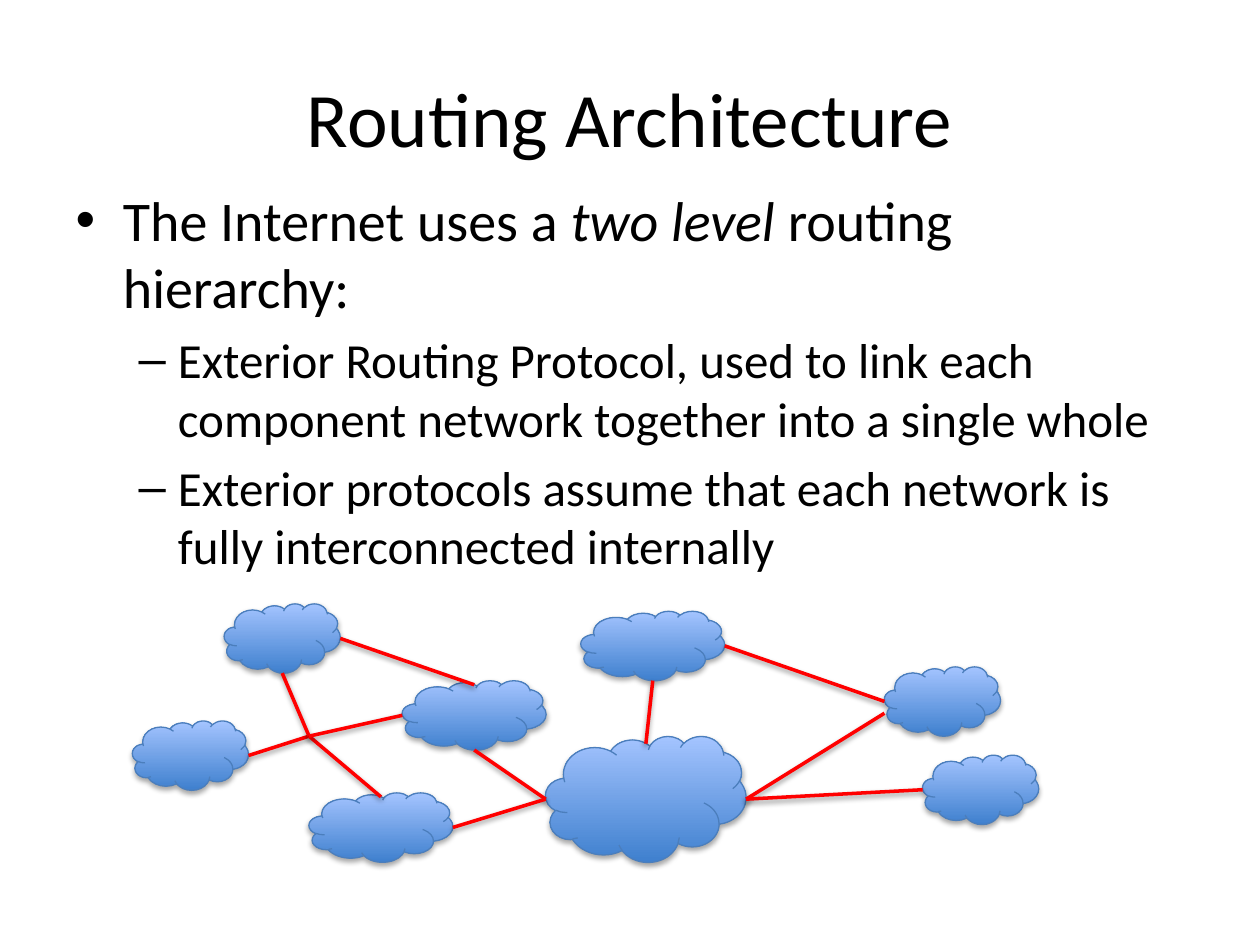
from dataclasses import dataclass

from lxml.etree import SubElement
from pptx import Presentation
from pptx.dml.color import RGBColor as RGB
from pptx.enum.shapes import MSO_CONNECTOR as CONN, MSO_SHAPE as SHAPE
from pptx.enum.text import MSO_ANCHOR, MSO_AUTO_SIZE, PP_ALIGN
from pptx.oxml.ns import qn
from pptx.util import Cm, Pt


@dataclass(frozen=True)
class Theme:
    font: str = "Calibri"
    text: RGB = RGB(0, 0, 0)
    title_size: float = 44
    level_sizes: tuple = (32, 28)
    cloud_bottom: RGB = RGB(0x3F, 0x80, 0xCE)
    cloud_top: RGB = RGB(0xA4, 0xC4, 0xFF)
    cloud_line: RGB = RGB(0x4B, 0x7E, 0xBC)
    cloud_line_width: float = 0.75
    link: RGB = RGB(0xFF, 0, 0)
    link_width: float = 2
    shadow: str = "000000"


THEME = Theme()

TITLE = "Routing Architecture"
# (level, runs of (text, italic))
BULLETS = [
    (0, [("The Internet uses a ", False), ("two level ", True),
         ("routing hierarchy:", False)]),
    (1, [("Exterior Routing Protocol, used to link each component network "
          "together into a single whole", False)]),
    (1, [("Exterior protocols assume that each network is fully "
          "interconnected internally", False)]),
]

# Sizes and positions in cm, relative to the diagram box
SMALL, WIDE, LARGE = (2.34, 1.4), (2.9, 1.4), (4.04, 2.54)
CLOUDS = {
    "south": (3.56, 3.81, WIDE),
    "centre": (5.44, 1.55, WIDE),
    "north": (9.04, 0.15, WIDE),
    "hub": (8.33, 2.67, LARGE),
    "east": (15.16, 1.27, SMALL),
    "southeast": (15.93, 3.05, SMALL),
    "west": (0, 2.36, SMALL),
    "northwest": (1.85, 0, SMALL),
    "junction": (3.56, 2.67, None),
}
# Points on a cloud as fractions of its width and height
SIDES = {
    "left": (0, 0.5),
    "lower left": (0, 0.67),
    "right": (1, 0.5),
    "top": (0.5, 0.06),
    "bottom": (0.5, 1),
}
JUNCTION = ("junction", None)
LINKS = [
    (("west", "right"), JUNCTION),
    (("northwest", "bottom"), JUNCTION),
    (JUNCTION, ("south", "top")),
    (JUNCTION, ("centre", "left")),
    (("northwest", "right"), ("centre", "top")),
    (("centre", "bottom"), ("hub", "left")),
    (("north", "bottom"), ("hub", "top")),
    (("south", "right"), ("hub", "left")),
    (("hub", "right"), ("east", "lower left")),
    (("hub", "right"), ("southeast", "left")),
    (("north", "right"), ("east", "left")),
]


def place(sp, box):
    sp.left, sp.top, sp.width, sp.height = (Cm(v) for v in box)


def add_run(p, text, size, italic=False):
    r = p.add_run()
    r.text = text
    r.font.name = THEME.font
    r.font.size = Pt(size)
    r.font.italic = italic
    r.font.color.rgb = THEME.text


def add_shadow(sp, distance, opacity):
    """Cast a soft shadow straight down; opacity is a percentage."""
    sp_pr = sp._element.spPr
    effects = sp_pr.find(qn("a:effectLst"))
    if effects is None:
        effects = SubElement(sp_pr, qn("a:effectLst"))
    shadow = SubElement(effects, qn("a:outerShdw"), blurRad=str(Pt(3.1)),
                        dist=str(Pt(distance)), dir="5400000", rotWithShape="0")
    color = SubElement(shadow, qn("a:srgbClr"), val=THEME.shadow)
    SubElement(color, qn("a:alpha"), val=str(opacity * 1000))


def fill_title(sp, box):
    place(sp, box)
    tf = sp.text_frame
    tf.auto_size = MSO_AUTO_SIZE.NONE
    tf.vertical_anchor = MSO_ANCHOR.MIDDLE
    p = tf.paragraphs[0]
    p.alignment = PP_ALIGN.CENTER
    add_run(p, TITLE, THEME.title_size)


def fill_bullets(sp, box):
    place(sp, box)
    tf = sp.text_frame
    tf.auto_size = MSO_AUTO_SIZE.NONE
    for i, (level, runs) in enumerate(BULLETS):
        p = tf.add_paragraph() if i else tf.paragraphs[0]
        p.level = level
        for text, italic in runs:
            add_run(p, text, THEME.level_sizes[level], italic)


def add_cloud(shapes, x, y, size):
    w, h = size
    sp = shapes.add_shape(SHAPE.CLOUD, Cm(x), Cm(y), Cm(w), Cm(h))
    sp.fill.gradient()
    sp.fill.gradient_angle = 90
    for stop, color in zip(sp.fill.gradient_stops,
                           (THEME.cloud_bottom, THEME.cloud_top)):
        stop.color.rgb = color
    sp.line.color.rgb = THEME.cloud_line
    sp.line.width = Pt(THEME.cloud_line_width)
    sp.shadow.inherit = False
    add_shadow(sp, 1.8, 35)


def add_link(shapes, start, end):
    line = shapes.add_connector(CONN.STRAIGHT, *(Cm(v) for v in start + end))
    line.line.color.rgb = THEME.link
    line.line.width = Pt(THEME.link_width)
    add_shadow(line, 1.6, 38)


def add_network(shapes, left, top):
    def point(name, side):
        x, y, size = CLOUDS[name]
        if size:
            fx, fy = SIDES[side]
            x, y = x + fx * size[0], y + fy * size[1]
        return left + x, top + y

    for x, y, size in CLOUDS.values():
        if size:
            add_cloud(shapes, left + x, top + y, size)
    for start, end in LINKS:
        add_link(shapes, point(*start), point(*end))


def main():
    prs = Presentation()
    prs.slide_width, prs.slide_height = Cm(25.4), Cm(19.05)
    slide = prs.slides.add_slide(prs.slide_layouts[1])
    fill_title(slide.shapes.title, (1.27, 0.76, 22.86, 3.18))
    fill_bullets(slide.placeholders[1], (1.27, 3.61, 22.86, 12.57))
    add_network(slide.shapes, 2.67, 12.17)
    prs.save("out.pptx")


if __name__ == "__main__":
    main()
